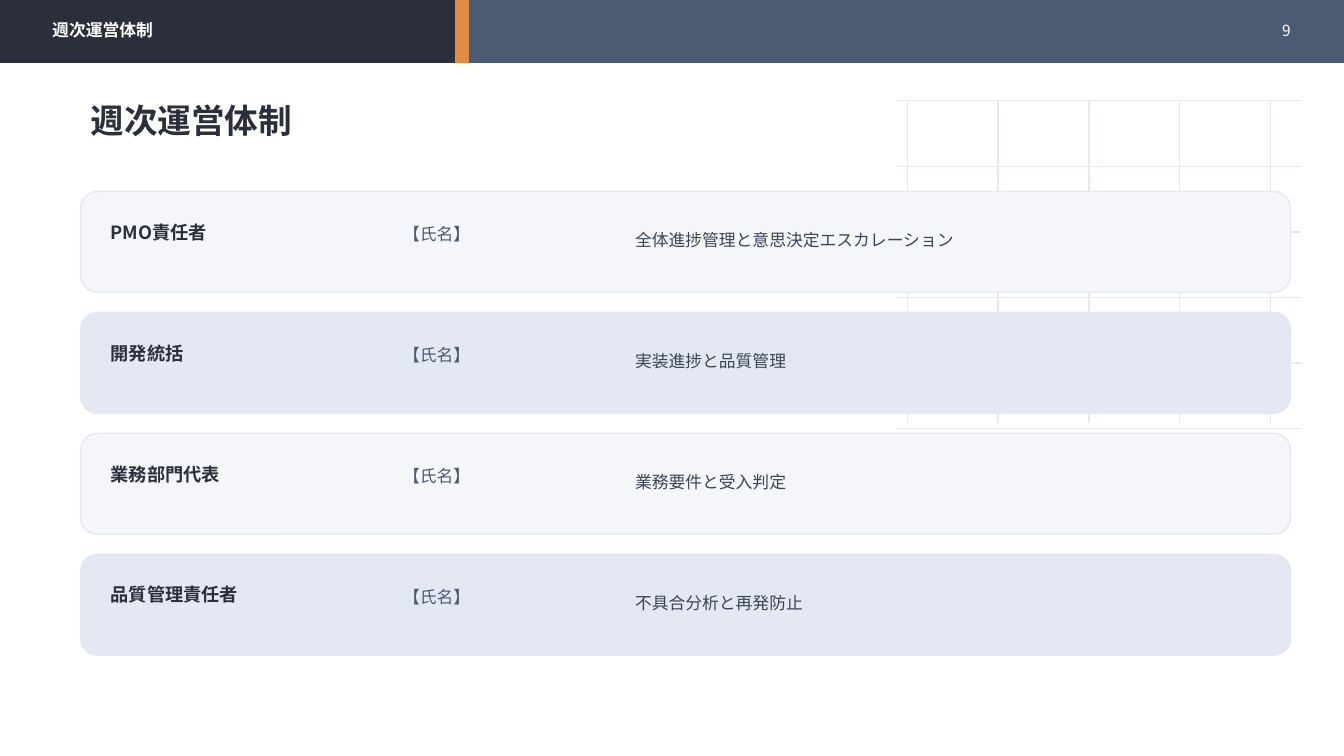
from lxml import etree
from pptx import Presentation
from pptx import util as u
from pptx.dml.color import RGBColor
from pptx.enum import shapes, text
from pptx.oxml import ns

NAVY = RGBColor(0x2A, 0x2F, 0x3B)
SLATE = RGBColor(0x4C, 0x5A, 0x74)
INK = RGBColor(0x3A, 0x44, 0x57)
ORANGE = RGBColor(0xE2, 0x8B, 0x45)
MIST = RGBColor(0xE3, 0xE8, 0xF2)
PALE = RGBColor(0xF4, 0xF6, 0xFA)
WHITE = RGBColor(0xFF, 0xFF, 0xFF)
FONT = "Noto Sans CJK JP"

HEADER_HEIGHT = 0.62
ROW_TOP, ROW_STEP = 1.9, 1.2
ROLES = [
    ("PMO責任者", "【氏名】", "全体進捗管理と意思決定エスカレーション"),
    ("開発統括", "【氏名】", "実装進捗と品質管理"),
    ("業務部門代表", "【氏名】", "業務要件と受入判定"),
    ("品質管理責任者", "【氏名】", "不具合分析と再発防止"),
]
# Per column: left, offset from row top, width, height, text format
COLUMNS = [
    (1, 0.28, 2.7, 0.24, {"size": u.Pt(13), "bold": True, "color": NAVY}),
    (3.9, 0.3, 2.1, 0.24, {"size": u.Pt(12), "color": SLATE}),
    (6.2, 0.25, 6.2, 0.45, {"size": u.Pt(12), "color": INK}),
]


def inches(*lengths):
    return [u.Inches(length) for length in lengths]


def add_grid_line(slide, *ends):
    line = slide.shapes.add_connector(shapes.MSO_CONNECTOR.STRAIGHT, *inches(*ends))
    line.line.color.rgb = MIST
    line.line.width = u.Pt(1)
    etree.SubElement(line._element.spPr, ns.qn("a:effectLst"))


def add_block(slide, kind, box, fill, outline):
    shape = slide.shapes.add_shape(kind, *inches(*box))
    shape.shadow.inherit = False
    shape.fill.solid()
    shape.fill.fore_color.rgb = fill
    shape.line.color.rgb = outline
    shape.line.width = u.Pt(1)


def add_text(slide, box, wording, formats, align=None):
    frame = slide.shapes.add_textbox(*inches(*box)).text_frame
    frame.word_wrap = True
    frame.vertical_anchor = text.MSO_ANCHOR.MIDDLE
    paragraph = frame.paragraphs[0]
    paragraph.alignment = align
    run = paragraph.add_run()
    run.text = wording
    for name, value in {"name": FONT, **formats}.items():
        if name == "color":
            run.font.color.rgb = value
        else:
            setattr(run.font, name, value)
    # Japanese glyphs use the East Asian typeface
    etree.SubElement(run._r.get_or_add_rPr(), ns.qn("a:ea"), typeface=FONT)


def add_grid(slide):
    for index in range(6):
        y = 1 + 0.65 * index
        add_grid_line(slide, 8.9, y, 12.9, y)
    for index in range(5):
        x = 9 + 0.9 * index
        add_grid_line(slide, x, 1, x, 4.2)


def add_header(slide):
    for left, width, color in [(0, 13.33, SLATE), (0, 4.6, NAVY), (4.52, 0.12, ORANGE)]:
        add_block(slide, shapes.MSO_SHAPE.RECTANGLE,
                  (left, 0, width, HEADER_HEIGHT), color, color)
    add_text(slide, (0.42, 0.17, 8.8, 0.26), "週次運営体制",
             {"size": u.Pt(12), "bold": True, "color": WHITE})
    add_text(slide, (12.15, 0.17, 0.75, 0.26), "9",
             {"size": u.Pt(11), "color": WHITE}, text.PP_ALIGN.RIGHT)


def add_role_row(slide, index, role):
    top = ROW_TOP + ROW_STEP * index
    add_block(slide, shapes.MSO_SHAPE.ROUNDED_RECTANGLE, (0.8, top, 12, 1),
              MIST if index % 2 else PALE, MIST)
    for wording, (left, offset, width, height, formats) in zip(role, COLUMNS):
        add_text(slide, (left, top + offset, width, height), wording, formats)


def main():
    presentation = Presentation()
    presentation.slide_width, presentation.slide_height = inches(13.33, 7.5)
    slide = presentation.slides.add_slide(presentation.slide_layouts[6])

    # Background grid and header band
    add_grid(slide)
    add_header(slide)

    # Title
    add_text(slide, (0.8, 0.95, 11.4, 0.48), "週次運営体制",
             {"size": u.Pt(24), "bold": True, "color": NAVY})

    # Role cards
    for index, role in enumerate(ROLES):
        add_role_row(slide, index, role)

    presentation.save("out.pptx")


if __name__ == "__main__":
    main()
